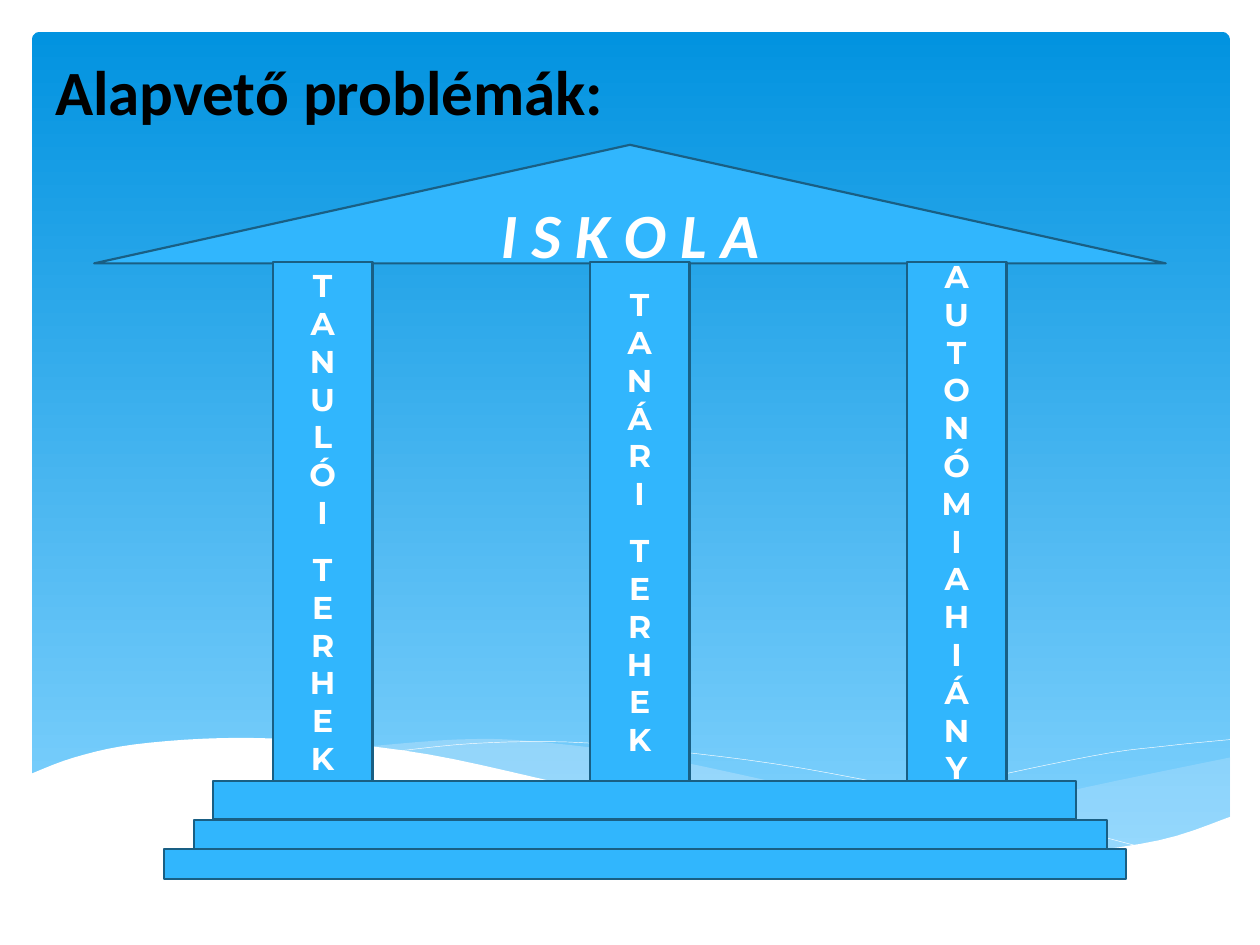
"""Build a slide showing a school temple resting on three problem pillars."""
from lxml import etree
from pptx import Presentation, util as u
from pptx.dml.color import RGBColor
from pptx.enum import shapes, text
from pptx.oxml.ns import qn

TITLE = "Alapvető problémák:"
ROOF = "I S K O L A"
PILLARS = ["TANULÓI TERHEK", "TANÁRI TERHEK", "AUTONÓMIAHIÁNY"]
STEPS = [(4.29, 15.75, 17.4, 0.77), (3.91, 16.53, 18.4, 0.6), (3.3, 17.12, 19.4, 0.6)]
PILLAR_LEFT, PILLAR_TOP, PILLAR_WIDTH, PILLAR_HEIGHT, PILLAR_PITCH = 5.5, 5.28, 2.01, 10.47, 6.39

RIGHT_WAVE = [
    [(24.8, 15.27), (21.9, 15.87), (19.15, 16.5), (16.81, 16.94)],
    [(16.81, 16.94), (18.62, 17.17), (20.42, 17.27), (22.17, 17.17), (23.6, 16.89), (24.8, 16.48)],
]
MIDDLE_WAVE = [
    [(22.71, 17.15), (19.71, 16.66), (16, 15.85), (13.08, 15.24), (10.67, 14.94), (9.19, 14.91), (7.29, 15.06)],
    [(7.29, 15.06), (9.22, 15.34), (11.43, 15.85), (14.4, 16.51), (17.3, 17.02), (19.35, 17.25),
     (21.3, 17.27), (22.71, 17.15)],
]
LONG_CREST = [[(7.87, 15.16), (9.53, 14.99), (11.46, 14.96), (13.56, 15.14), (16.18, 15.49),
               (19.33, 16.13), (23.06, 17.09)]]
RIGHT_CREST = [[(15.6, 16.74), (19.02, 15.88), (22.02, 15.24), (23.5, 15.04), (24.8, 14.91)]]
FOREGROUND = [
    [(24.82, 16.46), (23.37, 16.94), (21.26, 17.22), (19.35, 17.2), (16.97, 16.94), (14.1, 16.41),
     (11.35, 15.8), (8.64, 15.21), (6.35, 14.94), (4.5, 14.88), (2.7, 15.01), (1.5, 15.27), (0.58, 15.62)],
    [(0.58, 18.57)],
    [(24.82, 18.57)],
]
WAVES = [
    (RIGHT_WAVE, "C6E7FC", 29), (MIDDLE_WAVE, "C6E7FC", 40),
    (LONG_CREST, None, 100), (RIGHT_CREST, None, 100), (FOREGROUND, "FFFFFF", 100),
]


def color(value):
    return RGBColor.from_string(value)


def smooth_curve(points, pieces=5):
    """Return points of a Catmull-Rom curve through the given points."""
    padded = [points[0], *points, points[-1]]
    curve = [points[0]]
    for a, b, c, d in zip(padded, padded[1:], padded[2:], padded[3:]):
        for step in range(1, pieces + 1):
            t = step / pieces
            curve.append(tuple(
                0.5 * (2 * q + (r - p) * t + (2 * p - 5 * q + 4 * r - s) * t ** 2
                       + (3 * q - p - 3 * r + s) * t ** 3)
                for p, q, r, s in zip(a, b, c, d)))
    return curve


def add_wave(slide, curves, fill, opacity):
    points = [(u.Cm(x), u.Cm(y)) for curve in curves for x, y in smooth_curve(curve)]
    builder = slide.shapes.build_freeform(*points[0])
    builder.add_line_segments(points[1:], close=fill is not None)
    shape = builder.convert_to_shape()
    shape.shadow.inherit = False
    if fill is None:
        shape.fill.background()
        shape.line.color.rgb = color("FFFFFF")
        shape.line.width = u.Pt(0.25)
        return
    shape.fill.solid()
    shape.fill.fore_color.rgb = color(fill)
    shape.line.fill.background()
    if opacity < 100:
        fill_color = next(shape.element.spPr.iter(qn("a:srgbClr")))
        etree.SubElement(fill_color, qn("a:alpha")).set("val", str(opacity * 1000))


def add_block(slide, kind, *box):
    shape = slide.shapes.add_shape(kind, *map(u.Cm, box))
    shape.shadow.inherit = False
    shape.fill.solid()
    shape.fill.fore_color.rgb = color("31B6FD")
    shape.line.color.rgb = color("195F84")
    shape.line.width = u.Pt(1.25)
    return shape


def format_text(frame, font, size, ink, alignment, italic=False):
    for paragraph in frame.paragraphs:
        paragraph.alignment = alignment
        for run in paragraph.runs:
            run.font.name, run.font.size = font, u.Pt(size)
            run.font.bold, run.font.italic = True, italic
            run.font.color.rgb = color(ink)


def add_background(slide):
    panel = slide.shapes.add_shape(shapes.MSO_SHAPE.ROUNDED_RECTANGLE, *map(u.Cm, (0.64, 0.64, 24.16, 16.76)))
    panel.adjustments[0] = 0.01
    panel.shadow.inherit = False
    panel.line.fill.background()
    panel.fill.gradient()
    panel.fill.gradient_angle = 270
    for stop, shade in zip(panel.fill.gradient_stops, ["0293E0", "83D3FE"]):
        stop.color.rgb = color(shade)
    for wave in WAVES:
        add_wave(slide, *wave)


def place_title(slide):
    title = slide.shapes.title
    title.left, title.top, title.width, title.height = map(u.Cm, (0.86, 0.94, 12.04, 1.8))
    frame = title.text_frame
    frame.text = TITLE
    frame.word_wrap = False
    frame.auto_size = text.MSO_AUTO_SIZE.NONE
    frame.vertical_anchor = text.MSO_ANCHOR.TOP
    format_text(frame, "Calibri", 36, "000000", text.PP_ALIGN.LEFT)
    slide.shapes.element.append(title.element)


def add_temple(slide):
    center = text.PP_ALIGN.CENTER
    rectangle = shapes.MSO_SHAPE.RECTANGLE
    roof = add_block(slide, shapes.MSO_SHAPE.ISOSCELES_TRIANGLE, 1.9, 2.92, 21.6, 2.39)
    roof.text_frame.text = ROOF
    roof.text_frame.vertical_anchor = text.MSO_ANCHOR.MIDDLE
    format_text(roof.text_frame, "Calibri", 36, "FFFFFF", center, italic=True)
    for index, label in enumerate(PILLARS):
        left = PILLAR_LEFT + index * PILLAR_PITCH
        frame = add_block(slide, rectangle, left, PILLAR_TOP, PILLAR_WIDTH, PILLAR_HEIGHT).text_frame
        words = label.split()
        frame.text = "\n".join("".join(words))
        frame.vertical_anchor = text.MSO_ANCHOR.MIDDLE
        format_text(frame, "Montserrat", 18, "FFFFFF", center)
        if len(words) > 1:
            frame.paragraphs[len(words[0])].space_before = u.Pt(11)
    for step in STEPS:
        add_block(slide, rectangle, *step)


def main():
    presentation = Presentation()
    presentation.slide_width, presentation.slide_height = u.Cm(25.4), u.Cm(19.05)
    slide = presentation.slides.add_slide(presentation.slide_layouts[5])
    add_background(slide)
    place_title(slide)
    add_temple(slide)
    presentation.save("out.pptx")


if __name__ == "__main__":
    main()
